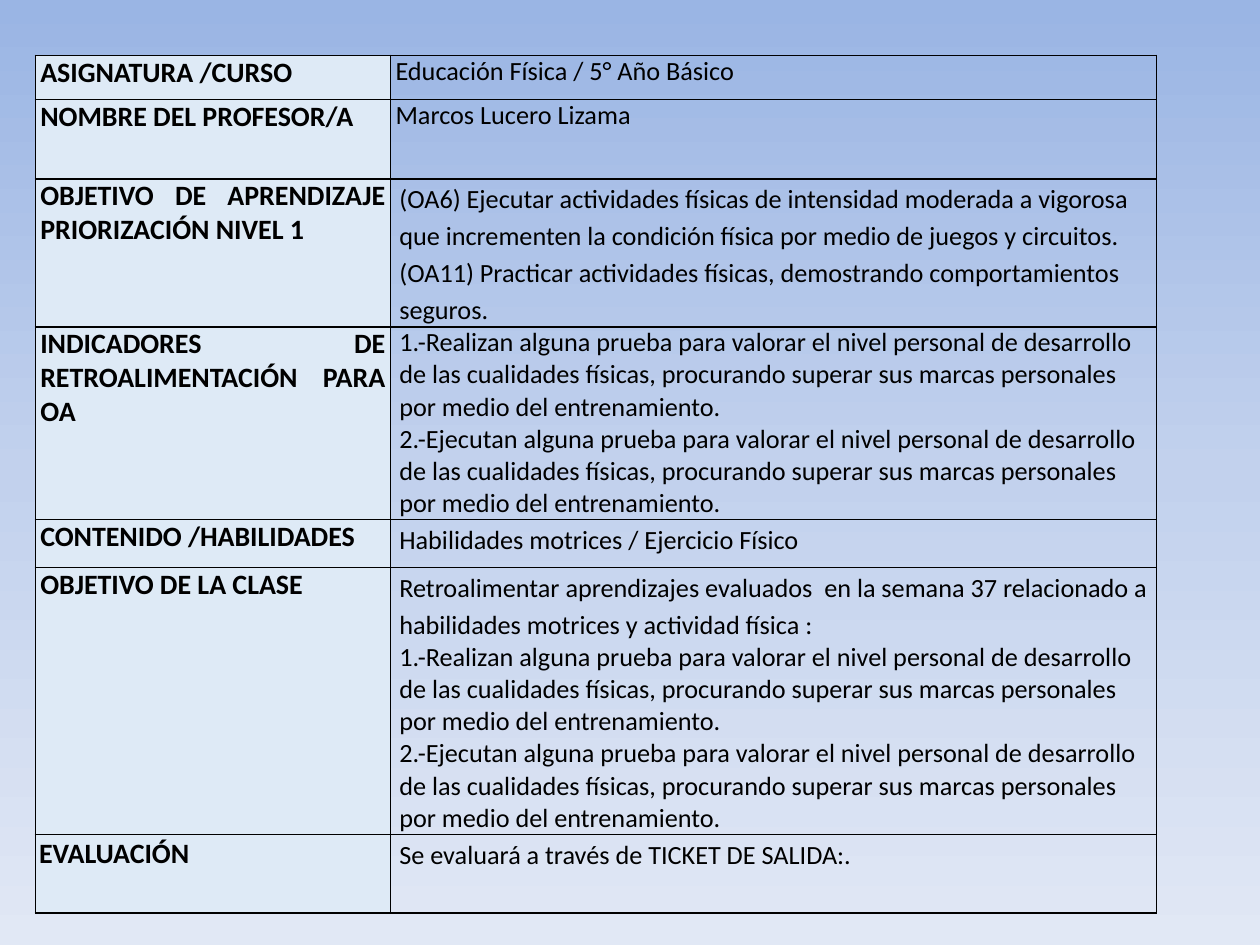
from lxml import etree
from copy import deepcopy
from pptx import Presentation
from pptx.dml.color import RGBColor
from pptx.enum.text import PP_ALIGN
from pptx.oxml.ns import qn
from pptx.util import Inches, Pt

JUSTIFY, LEFT = PP_ALIGN.JUSTIFY, PP_ALIGN.LEFT
COLORS = {
    "text": "000000", "border": "000000", "label": "DEEAF6",
    "sky_top": "9AB5E4", "sky_middle": "C2D1ED", "sky_bottom": "E1E8F5",
}
LOOSE = 1.15
TIGHT_INSETS = (0.04, 0)
WIDE_INSETS = (0.07, 0)
COLUMN_WIDTHS = (2.82, 6.08)

TEST_GOAL = (
    "alguna prueba para valorar el nivel personal de desarrollo de las "
    "cualidades físicas, procurando superar sus marcas personales por medio "
    "del entrenamiento."
)
INDICATORS = [(f"1.-Realizan {TEST_GOAL}", 1), (f"2.-Ejecutan {TEST_GOAL}", 1)]

# Row height, label, label insets, content insets, content as (text, line spacing)
LESSON_ROWS = [
    (0.35, "ASIGNATURA /CURSO", TIGHT_INSETS, TIGHT_INSETS,
     [("Educación Física / 5° Año Básico", 1)]),
    (0.63, "NOMBRE DEL PROFESOR/A", TIGHT_INSETS, TIGHT_INSETS,
     [("Marcos Lucero Lizama", 1)]),
    (1.17, "OBJETIVO DE APRENDIZAJE PRIORIZACIÓN NIVEL 1", TIGHT_INSETS, WIDE_INSETS,
     [("(OA6) Ejecutar actividades físicas de intensidad moderada a vigorosa que "
       "incrementen la condición física por medio de juegos y circuitos.", LOOSE),
      ("(OA11) Practicar actividades físicas, demostrando comportamientos seguros.",
       LOOSE)]),
    (1.53, "INDICADORES DE RETROALIMENTACIÓN PARA OA", TIGHT_INSETS, WIDE_INSETS,
     INDICATORS),
    (0.38, "CONTENIDO /HABILIDADES", TIGHT_INSETS, WIDE_INSETS,
     [("Habilidades motrices / Ejercicio Físico", LOOSE)]),
    (2.12, "OBJETIVO DE LA CLASE", TIGHT_INSETS, WIDE_INSETS,
     [("Retroalimentar aprendizajes evaluados  en la semana 37 relacionado a "
       "habilidades motrices y actividad física :", LOOSE)] + INDICATORS),
    (0.62, "EVALUACIÓN", (0.03, 0.02), WIDE_INSETS,
     [("Se evaluará a través de TICKET DE SALIDA:.", LOOSE)]),
]


def rgb(name):
    return RGBColor.from_string(COLORS[name])


def write_text(para, text, size=15, bold=False, align=LEFT, spacing=1):
    para.alignment = align
    para.line_spacing = spacing
    span = para.add_run()
    span.text = text
    span.font.name = "Calibri"
    span.font.size = Pt(size)
    span.font.bold = bold
    span.font.color.rgb = rgb("text")


def add_borders(cell, color="border", width=1):
    properties = cell._tc.get_or_add_tcPr()
    for index, side in enumerate(("lnL", "lnR", "lnT", "lnB")):
        line = etree.Element(qn(f"a:{side}"), w=str(Pt(width)))
        fill = etree.SubElement(line, qn("a:solidFill"))
        etree.SubElement(fill, qn("a:srgbClr"), val=COLORS[color])
        properties.insert(index, line)


class LessonSlide:
    def __init__(self, deck):
        self.page = deck.slides.add_slide(deck.slide_layouts[6])

    def gradient_background(self, *names):
        """Spread the named colours evenly from top to bottom."""
        fill = self.page.background.fill
        fill.gradient()
        fill.gradient_angle = 270
        stop_list = self.page.element.xpath(".//a:gsLst")[0]
        while len(stop_list) < len(names):
            stop_list.append(deepcopy(stop_list[0]))
        for index, (stop, name) in enumerate(zip(fill.gradient_stops, names)):
            stop.color.rgb = rgb(name)
            stop.position = index / (len(names) - 1)

    def fill_cell(self, cell, paragraphs, insets, fill=None, **text_format):
        horizontal, vertical = map(Inches, insets)
        cell.margin_left = cell.margin_right = horizontal
        cell.margin_top = cell.margin_bottom = vertical
        if fill:
            cell.fill.solid()
            cell.fill.fore_color.rgb = rgb(fill)
        else:
            cell.fill.background()
        add_borders(cell)
        frame = cell.text_frame
        for index, (text, spacing) in enumerate(paragraphs):
            para = frame.add_paragraph() if index else frame.paragraphs[0]
            write_text(para, text, spacing=spacing, **text_format)

    def lesson_table(self, left, top, rows):
        height = sum(row[0] for row in rows)
        table = self.page.shapes.add_table(
            len(rows), len(COLUMN_WIDTHS), Inches(left), Inches(top),
            Inches(sum(COLUMN_WIDTHS)), Inches(height)).table
        table.first_row = table.horz_banding = False
        for column, width in zip(table.columns, COLUMN_WIDTHS):
            column.width = Inches(width)
        for row, (height, label, label_insets, insets, content) in zip(table.rows, rows):
            row.height = Inches(height)
            label_cell, content_cell = row.cells
            self.fill_cell(label_cell, [(label, 1)], label_insets, fill="label",
                           size=16, bold=True, align=JUSTIFY)
            self.fill_cell(content_cell, content, insets)


def main():
    deck = Presentation()
    deck.slide_width, deck.slide_height = Inches(10), Inches(7.5)
    lesson = LessonSlide(deck)
    lesson.gradient_background("sky_top", "sky_middle", "sky_bottom")
    lesson.lesson_table(0.28, 0.44, LESSON_ROWS)
    deck.save("out.pptx")


if __name__ == "__main__":
    main()
